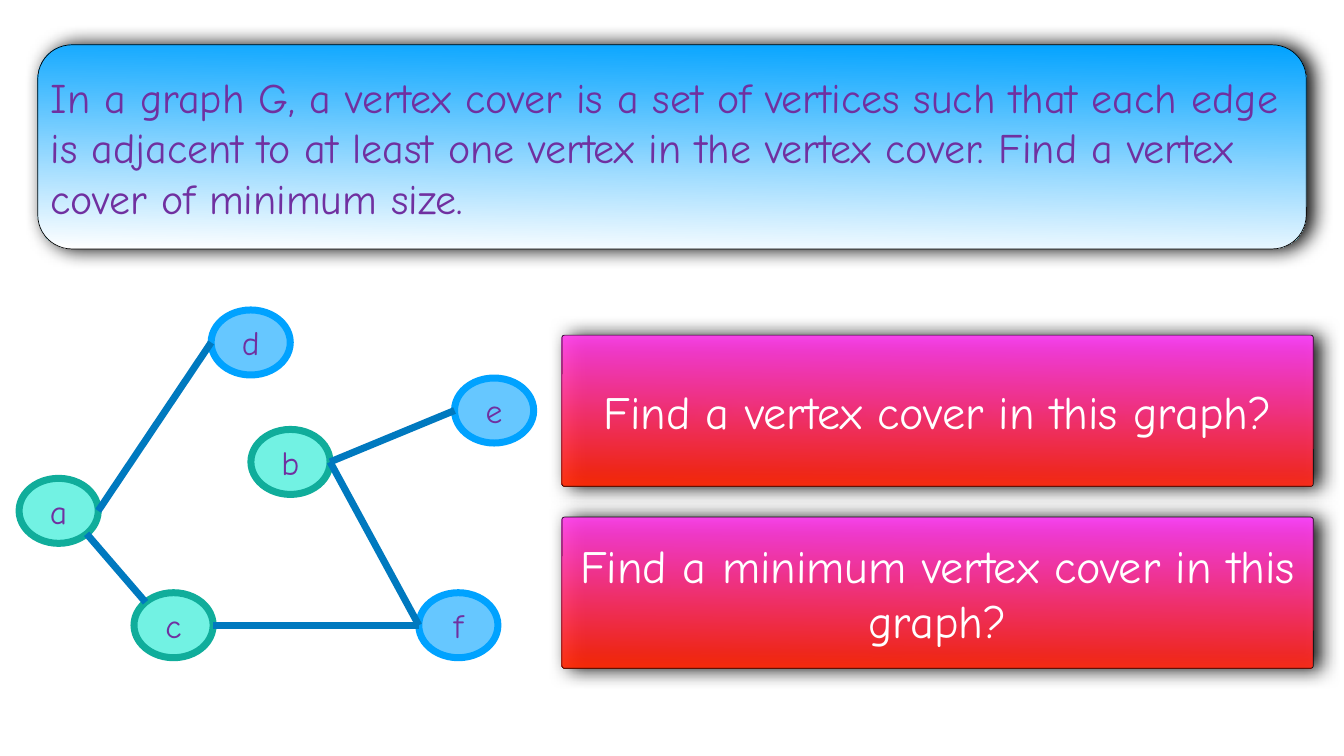
from dataclasses import dataclass
from math import cos, radians, sin

from pptx import Presentation
from pptx.dml.color import RGBColor
from pptx.enum.shapes import MSO_CONNECTOR as Connector, MSO_SHAPE as Shape
from pptx.enum.text import MSO_ANCHOR as Anchor, PP_ALIGN as Align
from pptx.oxml import parse_xml
from pptx.oxml.ns import nsdecls
from pptx.util import Inches, Pt


@dataclass(frozen=True)
class Theme:
    """Colours, type sizes in points and line widths of the slide."""
    font: str = "Comic Neue"
    ink: str = "7030A0"
    light: str = "FFFFFF"
    outline: str = "000000"
    edge: str = "0079BF"
    banner: tuple = ("00A2FF", "FFFFFF")
    question: tuple = ("FF40FF", "FF2600")
    covered: tuple = ("72F2E3", "10AD9B")
    plain: tuple = ("66C7FF", "00A2FF")
    banner_size: int = 60
    question_size: int = 66
    node_size: int = 48
    thin: int = 1
    thick: int = 10


class GraphPage:
    """Draws on one page, with lengths in percent of the slide's width and height."""

    def __init__(self, deck, theme):
        """Add a blank page to the deck."""
        self.deck, self.theme = deck, theme
        self.page = deck.slides.add_slide(deck.slide_layouts[6])

    def place(self, across, down):
        """Turn a pair of percentages into slide lengths."""
        return round(self.deck.slide_width * across / 100), round(self.deck.slide_height * down / 100)

    def box(self, kind, area, text, size, colour, align):
        """Add a preset shape with one centred-height paragraph."""
        box = self.page.shapes.add_shape(kind, *self.place(*area[:2]), *self.place(*area[2:]))
        box.shadow.inherit = False
        frame = box.text_frame
        margins = {f"margin_{side}": Inches(0.06) for side in ("left", "top", "right", "bottom")}
        for name, value in {**margins, "word_wrap": True, "vertical_anchor": Anchor.MIDDLE}.items():
            setattr(frame, name, value)
        para = frame.paragraphs[0]
        para.alignment = align
        span = para.add_run()
        span.text = text
        for name, value in {"name": self.theme.font, "size": Pt(size)}.items():
            setattr(span.font, name, value)
        span.font.color.rgb = RGBColor.from_string(colour)
        return box

    def stroke(self, line, colour, width):
        """Give a line its colour and width."""
        line.color.rgb = RGBColor.from_string(colour)
        line.width = Pt(width)

    def panel(self, area, text, size, colour, align, gradient, corner=0.1667, opacity=100):
        """Add a rounded panel with a gradient, a thin outline and a soft shadow."""
        panel = self.box(Shape.ROUNDED_RECTANGLE, area, text, size, colour, align)
        panel.adjustments[0] = corner
        panel.fill.gradient()
        panel.fill.gradient_angle = 269
        for stop, shade, position in zip(panel.fill.gradient_stops, gradient, (0, 1)):
            stop.color.rgb = RGBColor.from_string(shade)
            stop.position = position
        self.stroke(panel.line, self.theme.outline, self.theme.thin)
        properties = panel._element.spPr
        if opacity < 100:
            for shade in properties.iterfind(".//{*}srgbClr"):
                shade.append(parse_xml(f'<a:alpha {nsdecls("a")} val="{opacity * 1000}"/>'))
        properties.find("{*}effectLst").append(parse_xml(
            f'<a:outerShdw {nsdecls("a")} blurRad="{Pt(28)}" dist="{Pt(9)}" dir="0" rotWithShape="0">'
            f'<a:srgbClr val="{self.theme.outline}"><a:alpha val="97000"/></a:srgbClr></a:outerShdw>'))

    def node(self, name, corner, colours):
        """Add a vertex of the graph and return its shape."""
        node = self.box(Shape.OVAL, (*corner, 5.89, 8.6), name,
                        self.theme.node_size, self.theme.ink, Align.CENTER)
        node.fill.solid()
        node.fill.fore_color.rgb = RGBColor.from_string(colours[0])
        self.stroke(node.line, colours[1], self.theme.thick)
        return node

    def rim(self, node, degrees):
        """Find the point on a vertex outline, clockwise from its right end."""
        return (round(node.left + node.width * (1 + cos(radians(degrees))) / 2),
                round(node.top + node.height * (1 + sin(radians(degrees))) / 2))

    def edge(self, start, start_angle, end, end_angle):
        """Join two vertices with a thick straight line."""
        edge = self.page.shapes.add_connector(
            Connector.STRAIGHT, *self.rim(start, start_angle), *self.rim(end, end_angle))
        self.stroke(edge.line, self.theme.edge, self.theme.thick)
        edge._element.spPr.append(parse_xml(f'<a:effectLst {nsdecls("a")}/>'))


def main():
    """Build the vertex cover slide."""
    deck = Presentation()
    deck.slide_width, deck.slide_height = Inches(26.67), Inches(15)
    theme = Theme()
    page = GraphPage(deck, theme)

    page.panel((2.81, 5.93, 94.38, 27),
               "In a graph G, a vertex cover is a set of vertices such that each edge is adjacent to "
               "at least one vertex in the vertex cover. Find a vertex cover of minimum size.",
               theme.banner_size, theme.ink, Align.LEFT, theme.banner)

    vertices = {
        "a": ((1.42, 63.27), theme.covered),
        "d": ((15.71, 41), theme.plain),
        "b": ((18.67, 56.8), theme.covered),
        "c": ((9.97, 78.4), theme.covered),
        "e": ((33.82, 50), theme.plain),
        "f": ((31.16, 78.4), theme.plain),
    }
    nodes = {name: page.node(name, *look) for name, look in vertices.items()}
    right, lower_right, left, upper_left = 0, 45, 180, 225
    for start, start_angle, end, end_angle in (
            ("d", left, "a", right), ("c", upper_left, "a", lower_right),
            ("e", left, "b", right), ("f", left, "b", right), ("f", left, "c", right)):
        page.edge(nodes[start], start_angle, nodes[end], end_angle)

    questions = ("Find a vertex cover in this graph?", "Find a minimum vertex cover in this graph?")
    for row, question in enumerate(questions):
        page.panel((41.81, 44.33 + 24.07 * row, 55.91, 20), question, theme.question_size,
                   theme.light, Align.CENTER, theme.question, corner=0.017, opacity=93)

    deck.save("out.pptx")


if __name__ == "__main__":
    main()
